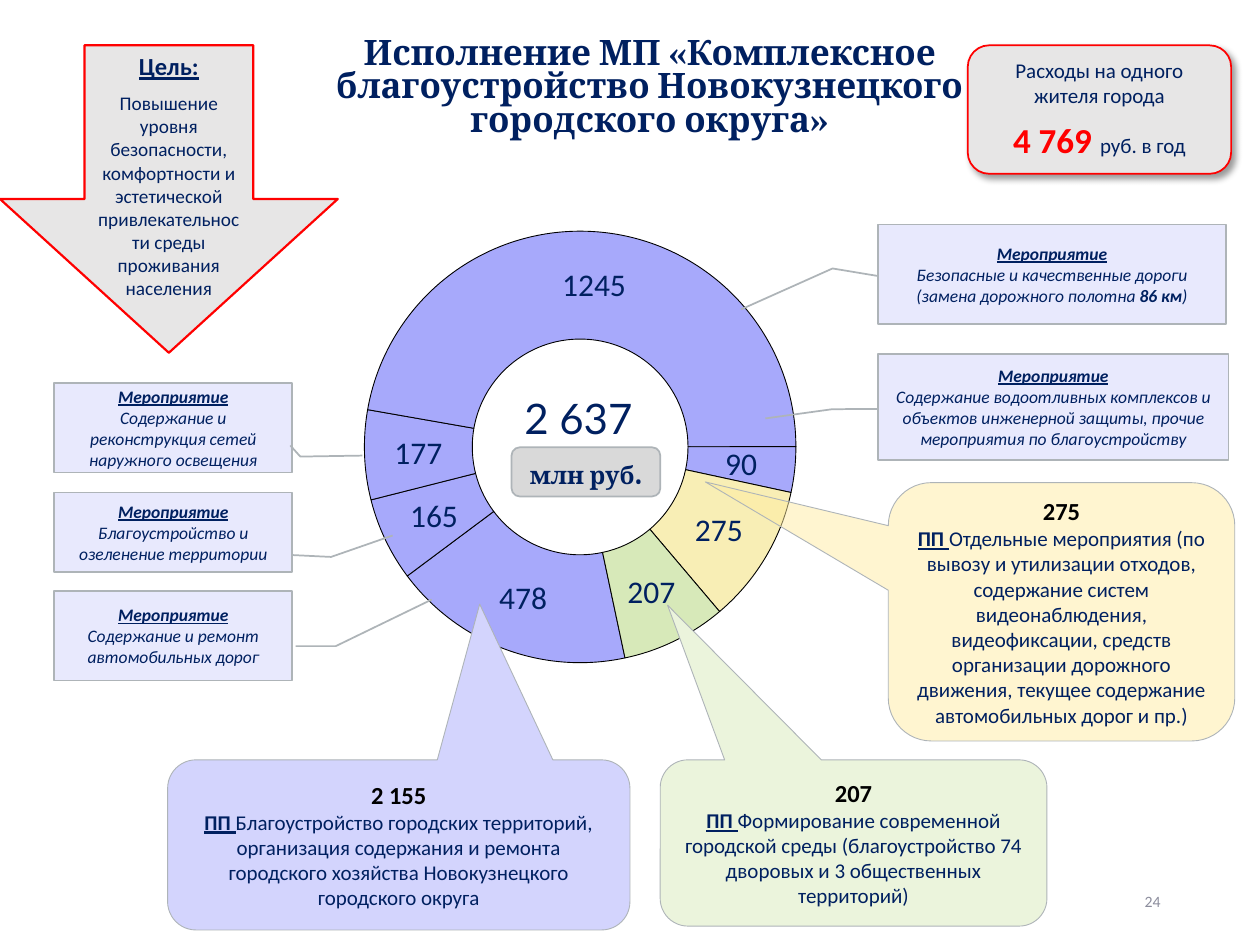
from lxml import etree
from pptx import Presentation
from pptx.chart.data import CategoryChartData
from pptx.dml.color import RGBColor
from pptx.enum.chart import XL_CHART_TYPE as ChartType
from pptx.enum.shapes import MSO_SHAPE as Shape
from pptx.enum.text import MSO_ANCHOR as Anchor, PP_ALIGN as Align
from pptx.oxml import parse_xml
from pptx.oxml.ns import nsdecls, qn
from pptx.util import Pt

NAVY = RGBColor(0x00, 0x20, 0x60)
BLACK = RGBColor(0x00, 0x00, 0x00)
RED = RGBColor(0xFF, 0x00, 0x00)
GRAY = RGBColor(0xAE, 0xB4, 0xB8)
PAGE_GRAY = RGBColor(0x8C, 0x8D, 0x9D)
LIGHT_GRAY = RGBColor(0xE7, 0xE6, 0xE6)
UNIT_GRAY = RGBColor(0xD9, 0xD9, 0xD9)
LILAC = RGBColor(0xD3, 0xD4, 0xFD)
VIOLET = RGBColor(0xA7, 0xA9, 0xFB)
YELLOW = RGBColor(0xFF, 0xED, 0xA3)
PALE_YELLOW = RGBColor(0xF8, 0xEE, 0xB5)
GREEN = RGBColor(0xD7, 0xE9, 0xB9)
PALE_GREEN = RGBColor(0xEB, 0xF4, 0xDC)

VALUES = (478, 165, 177, 1245, 90, 275, 207)
SLICE_COLORS = (VIOLET,) * 5 + (PALE_YELLOW, GREEN)

SUBPROGRAMS = [
    ((507.6, 275.8, 198, 147.6), (-1.028, -0.503), YELLOW, 50, "275",
     "Отдельные мероприятия (по вывозу и утилизации отходов, содержание систем "
     "видеонаблюдения, видеофиксации, средств организации дорожного движения, "
     "текущее содержание автомобильных дорог и пр.)"),
    ((377.3, 434.2, 221, 95), (-0.481, -1.431), PALE_GREEN, 100, "207",
     "Формирование современной городской среды (благоустройство 74 дворовых "
     "и 3 общественных территорий)"),
    ((95.8, 434.2, 264.2, 97.2), (0.175, -1.416), LILAC, 100, "2 155",
     "Благоустройство городских территорий, организация содержания и ремонта "
     "городского хозяйства Новокузнецкого городского округа"),
]

ACTIVITIES = [
    ((501.8, 202.3, 200.2, 60.5), (0.519, 0, 0.522, -0.131, 0.609, -0.322),
     [("Содержание водоотливных комплексов и объектов инженерной защиты, "
       "прочие мероприятия по благоустройству", False)]),
    ((31, 281.5, 136, 45.4), (0.786, 1, 0.81, 1.163, 0.54, 1.422),
     [("Благоустройство и озеленение территории", False)]),
    ((31, 337.7, 136, 51.1), (0.617, 1.014, 0.617, 1.183, 0.097, 1.586),
     [("Содержание и ремонт автомобильных дорог", False)]),
    ((31, 218.9, 136, 51.1), (0.698, 0.992, 0.822, 1.034, 0.811, 1.295),
     [("Содержание и реконструкция сетей наружного освещения", False)]),
    ((501.8, 128.2, 198.7, 56.9), (0.519, 0, 0.443, -0.131, 0.854, -0.394),
     [("Безопасные и качественные дороги (замена дорожного полотна ", False),
      ("86 км", True), (")", False)]),
]


def piece(text, size, color=NAVY, font="Calibri", bold=False, italic=False, underline=False):
    """Describe one run of text."""
    return text, size, color, font, bold, italic, underline


def format_font(target, size, color, name, bold=False, italic=False, underline=False):
    """Apply the character formatting to a font."""
    target.size, target.name = Pt(size), name
    target.bold, target.italic, target.underline = bold, italic, underline
    target.color.rgb = color


def write(shape, paragraphs, anchor=Anchor.MIDDLE, align=Align.CENTER, gap=0):
    """Fill a shape with paragraphs made of described runs."""
    frame = shape.text_frame
    frame.word_wrap = True
    frame.vertical_anchor = anchor
    for index, pieces in enumerate(paragraphs):
        paragraph = frame.add_paragraph() if index else frame.paragraphs[0]
        paragraph.alignment = align
        paragraph.space_before = Pt(gap)
        for text, *style in pieces:
            run = paragraph.add_run()
            run.text = text
            format_font(run.font, *style)


def add_shape(slide, kind, box, fill, line=GRAY, width=1, adjustments=(), opacity=100):
    """Add a filled and outlined preset shape."""
    shape = slide.shapes.add_shape(kind, *map(Pt, box))
    shape.shadow.inherit = False
    shape.fill.solid()
    shape.fill.fore_color.rgb = fill
    if opacity < 100:
        color = shape.fill._xPr.find(".//" + qn("a:srgbClr"))
        etree.SubElement(color, qn("a:alpha")).set("val", str(opacity * 1000))
    shape.line.color.rgb = line
    shape.line.width = Pt(width)
    for index, value in enumerate(adjustments):
        shape.adjustments[index] = value
    return shape


def add_shadow(shape):
    """Give a shape a soft shadow to the lower right."""
    effects = shape._element.spPr.find(qn("a:effectLst"))
    effects.append(parse_xml(
        f'<a:outerShdw {nsdecls("a")} blurRad="{Pt(4)}" dist="{Pt(3)}" dir="2700000" '
        'algn="tl" rotWithShape="0"><a:srgbClr val="000000"><a:alpha val="40000"/>'
        '</a:srgbClr></a:outerShdw>'))


def add_text(slide, box, text, size, color=NAVY, font="Calibri", align=Align.CENTER):
    """Add a one-line text box."""
    write(slide.shapes.add_textbox(*map(Pt, box)), [[piece(text, size, color, font)]], align=align)


def set_title(slide, text):
    """Place and format the title placeholder."""
    title = slide.shapes.title
    title.left, title.top, title.width, title.height = map(Pt, (178.6, 20.9, 385.2, 88.6))
    write(title, [[piece(text, 20, font="Cambria", bold=True)]], Anchor.BOTTOM)
    title.text_frame.margin_bottom = Pt(30)
    title.text_frame.paragraphs[0].line_spacing = 0.8


def add_doughnut(slide):
    """Add the doughnut chart of spending by activity."""
    data = CategoryChartData()
    data.categories = [str(number) for number in range(1, len(VALUES) + 1)]
    data.add_series("Series 1", VALUES)
    box = map(Pt, (99.4, 88.6, 475.2, 338.4))
    chart = slide.shapes.add_chart(ChartType.DOUGHNUT, *box, data).chart
    chart.has_legend = chart.has_title = False
    format_font(chart.font, 18, NAVY, "Calibri")
    plot = chart.plots[0]
    plot.vary_by_categories = False
    plot.has_data_labels = True
    labels = plot.data_labels
    labels.show_value, labels.show_percentage = True, False
    labels.number_format, labels.number_format_is_linked = "0", False
    format_font(labels.font, 18, NAVY, "Calibri")
    for index, color in enumerate(SLICE_COLORS):
        point = plot.series[0].points[index].format
        point.fill.solid()
        point.fill.fore_color.rgb = color
        point.line.color.rgb = BLACK
        point.line.width = Pt(0.5)
    area = chart._chartSpace.find(".//" + qn("c:plotArea"))
    for tag, value in (("c:firstSliceAng", "168"), ("c:holeSize", "39")):
        area.find(".//" + qn(tag)).set("val", value)
    layout = area.find(qn("c:layout"))
    if layout is not None:
        area.remove(layout)
    settings = (("layoutTarget", "inner"), ("xMode", "edge"), ("yMode", "edge"),
                ("x", 0.229), ("y", 0.128), ("w", 0.519), ("h", 0.73))
    parts = "".join(f'<c:{name} val="{value}"/>' for name, value in settings)
    area.insert(0, parse_xml(
        f'<c:layout {nsdecls("c")}><c:manualLayout>{parts}</c:manualLayout></c:layout>'))


def add_subprogram(slide, box, tip, fill, opacity, amount, text):
    """Add a rounded callout with a subprogram and its amount."""
    shape = add_shape(slide, Shape.ROUNDED_RECTANGULAR_CALLOUT, box, fill, width=0.5,
                      adjustments=tip, opacity=opacity)
    write(shape, [[piece(amount, 14, BLACK, bold=True)],
                  [piece("ПП ", 12, bold=True, underline=True), piece(text, 12)]])


def add_activity(slide, box, leader, parts):
    """Add a bordered callout with an activity and its leader line."""
    shape = add_shape(slide, Shape.LINE_CALLOUT_2, box, LILAC, adjustments=leader, opacity=50)
    write(shape, [[piece("Мероприятие", 10, bold=True, italic=True, underline=True)],
                  [piece(text, 10, bold=bold, italic=True) for text, bold in parts]])


def add_goal(slide):
    """Add the arrow that states the goal."""
    arrow = add_shape(slide, Shape.DOWN_ARROW, (0, 25.9, 193, 175.7), LIGHT_GRAY, RED, 1.25)
    write(arrow, [[piece("Цель:", 14, bold=True, underline=True)],
                  [piece("Повышение уровня безопасности, комфортности и эстетической "
                         "привлекательности среды проживания населения", 11)]], Anchor.TOP)
    arrow.text_frame.paragraphs[1].space_before = Pt(6)


def add_cost_per_resident(slide):
    """Add the box with the spending per resident."""
    card = add_shape(slide, Shape.ROUNDED_RECTANGLE, (553, 25.9, 150.5, 73.4), LIGHT_GRAY, RED)
    add_shadow(card)
    write(card, [[piece("Расходы на одного жителя города", 12)],
                 [piece("4 769 ", 20, RED, bold=True), piece("руб. в год", 12)]],
          Anchor.TOP, gap=6)


def add_unit(slide):
    """Add the unit label inside the doughnut."""
    badge = add_shape(slide, Shape.ROUNDED_RECTANGLE, (292.3, 255.6, 85, 28.1), UNIT_GRAY)
    write(badge, [[piece("млн руб", 14, font="Cambria", bold=True),
                   piece(".", 18, font="Cambria", bold=True)]])


def main():
    """Build the slide and save it."""
    presentation = Presentation()
    presentation.slide_width, presentation.slide_height = Pt(720), Pt(540)
    slide = presentation.slides.add_slide(presentation.slide_layouts[5])
    set_title(slide, "Исполнение МП «Комплексное благоустройство Новокузнецкого городского округа»")
    add_doughnut(slide)
    add_text(slide, (508.3, 500.4, 162, 28.8), "24", 9, PAGE_GRAY, align=Align.RIGHT)
    add_text(slide, (280.8, 220.5, 99.4, 36), "2 637", 24, font="Lato")
    for subprogram in SUBPROGRAMS:
        add_subprogram(slide, *subprogram)
    for activity in ACTIVITIES:
        add_activity(slide, *activity)
    add_goal(slide)
    add_cost_per_resident(slide)
    add_unit(slide)
    presentation.save("out.pptx")


if __name__ == "__main__":
    main()
